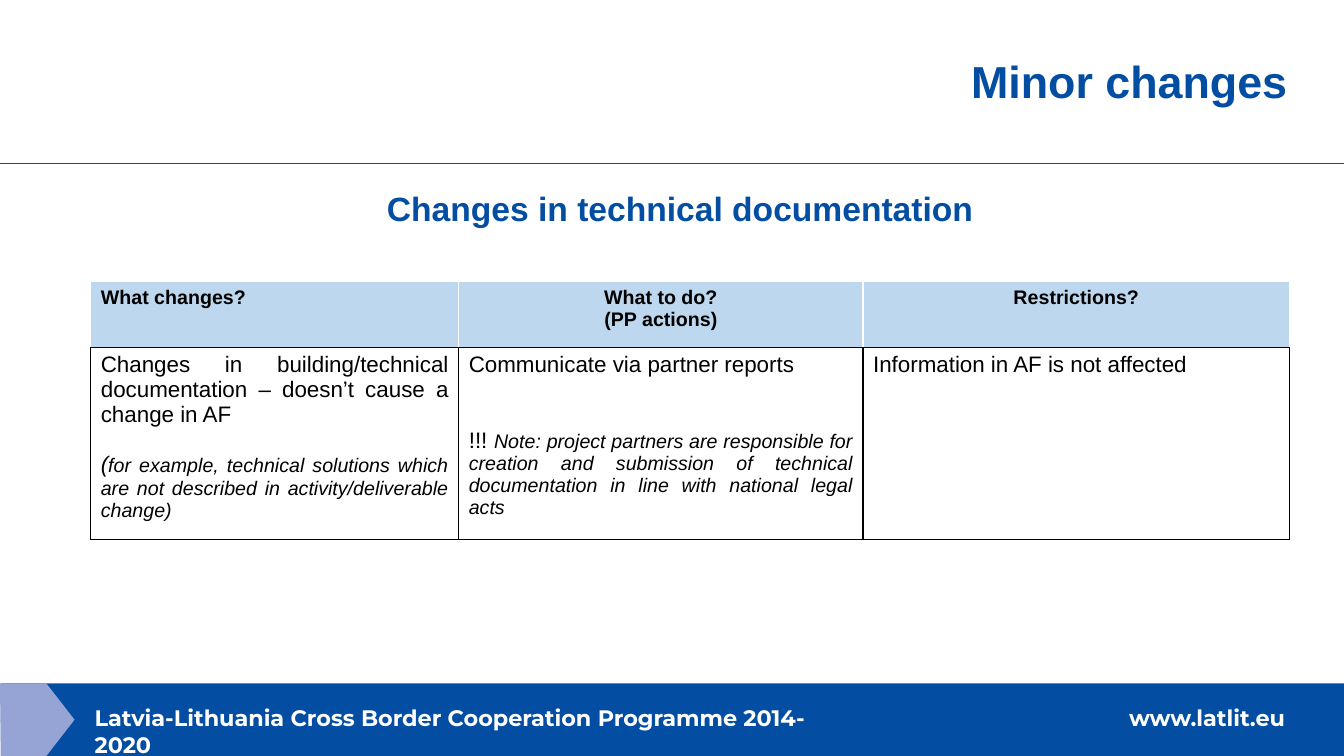
from lxml import etree
from pptx import Presentation
from pptx.dml.color import RGBColor
from pptx.enum.shapes import MSO_CONNECTOR, MSO_SHAPE
from pptx.enum.text import MSO_ANCHOR, PP_ALIGN
from pptx.oxml.ns import qn
from pptx.util import Inches, Pt

BLUE = RGBColor(0x03, 0x4E, 0xA2)
LAVENDER = RGBColor(0x95, 0xA4, 0xD4)
PALE_BLUE = RGBColor(0xBD, 0xD7, 0xEE)
WHITE = RGBColor(0xFF, 0xFF, 0xFF)
BLACK = RGBColor(0, 0, 0)
LEFT, CENTER, RIGHT, JUSTIFY = (
    PP_ALIGN.LEFT, PP_ALIGN.CENTER, PP_ALIGN.RIGHT, PP_ALIGN.JUSTIFY)
TOP = MSO_ANCHOR.TOP
STRAIGHT = MSO_CONNECTOR.STRAIGHT
RECTANGLE = MSO_SHAPE.RECTANGLE

HEADERS = [
    (["What changes?"], LEFT),
    (["What to do?", "(PP actions)"], CENTER),
    (["Restrictions?"], CENTER),
]
DETAILS = [
    [
        (0, [("Changes in building/technical documentation – doesn’t cause a change in AF", 16, False)]),
        (18, [("(", 16, True),
              ("for example, technical solutions which are not described in "
               "activity/deliverable change)", 14, True)]),
    ],
    [
        (0, [("Communicate via partner reports", 16, False)]),
        (36, [("!!! ", 16, False),
              ("Note: project partners are responsible for creation and submission of "
               "technical documentation in line with national legal acts", 14, True)]),
    ],
    [(0, [("Information in AF is not affected", 16, False)])],
]


def write(paragraph, text, size=16, color=BLACK, bold=False, italic=False,
          font="Arial", align=LEFT):
    paragraph.alignment = align
    run = paragraph.add_run()
    run.text = text
    run.font.name = font
    run.font.size = Pt(size)
    run.font.bold = bold
    run.font.italic = italic
    run.font.color.rgb = color


class SlideBuilder:
    def __init__(self, slide):
        self.slide = slide
        self.shapes = slide.shapes

    def paint(self, shape, color):
        shape.shadow.inherit = False
        shape.fill.solid()
        shape.fill.fore_color.rgb = color
        shape.line.fill.background()

    def line(self, x1, y1, x2, y2, color, width):
        rule = self.shapes.add_connector(
            STRAIGHT, Inches(x1), Inches(y1), Inches(x2), Inches(y2))
        rule.line.color.rgb = color
        rule.line.width = Pt(width)
        etree.SubElement(rule.line._get_or_add_ln().getparent(), qn("a:effectLst"))

    def rectangle(self, x, y, width, height, color):
        band = self.shapes.add_shape(
            RECTANGLE, Inches(x), Inches(y), Inches(width), Inches(height))
        self.paint(band, color)

    def polygon(self, points, color):
        corners = [(Inches(x), Inches(y)) for x, y in points]
        outline = self.shapes.build_freeform(*corners[0])
        outline.add_line_segments(corners[1:], close=True)
        self.paint(outline.convert_to_shape(), color)

    def text(self, x, y, width, height, content, **style):
        box = self.shapes.add_textbox(Inches(x), Inches(y), Inches(width), Inches(height))
        frame = box.text_frame
        frame.word_wrap = True
        frame.vertical_anchor = TOP
        write(frame.paragraphs[0], content, **style)

    def borders(self, cell, **sides):
        properties = cell._tc.get_or_add_tcPr()
        for position, (side, color) in enumerate(sides.items()):
            edge = etree.Element(qn(f"a:ln{side}"), w=str(Pt(1)))
            fill = etree.SubElement(edge, qn("a:solidFill"))
            etree.SubElement(fill, qn("a:srgbClr"), val=str(color))
            properties.insert(position, edge)

    def fill_cell(self, cell, color, paragraphs, align, **style):
        cell.fill.solid()
        cell.fill.fore_color.rgb = color
        frame = cell.text_frame
        for index, (space, runs) in enumerate(paragraphs):
            paragraph = frame.add_paragraph() if index else frame.paragraphs[0]
            if space:
                paragraph.space_before = Pt(space)
            for text, size, italic in runs:
                write(paragraph, text, size=size, italic=italic, align=align, **style)

    def table(self, x, y, widths, heights):
        grid = self.shapes.add_table(
            len(heights), len(widths), Inches(x), Inches(y),
            Inches(sum(widths)), Inches(sum(heights))).table
        for column, width in zip(grid.columns, widths):
            column.width = Inches(width)
        for row, height in zip(grid.rows, heights):
            row.height = Inches(height)
        for index, ((lines, align), details) in enumerate(zip(HEADERS, DETAILS)):
            header, detail = grid.cell(0, index), grid.cell(1, index)
            heading = [(0, [(line, 14, False)]) for line in lines]
            self.fill_cell(header, PALE_BLUE, heading, align, bold=True)
            self.borders(header, L=WHITE, R=WHITE, T=WHITE, B=BLACK)
            self.fill_cell(detail, WHITE, details, JUSTIFY)
            self.borders(detail, L=BLACK, R=BLACK, T=BLACK, B=BLACK)


def main():
    deck = Presentation()
    deck.slide_width = Inches(13.33)
    deck.slide_height = Inches(7.5)
    page = SlideBuilder(deck.slides.add_slide(deck.slide_layouts[6]))

    page.line(0, 1.62, 13.33, 1.62, BLUE, 0.5)
    page.rectangle(0.01, 6.78, 13.32, 0.72, BLUE)
    page.polygon([(0, 6.78), (0.46, 6.78), (0.74, 7.14), (0.46, 7.5), (0.01, 7.5)], LAVENDER)
    footer = dict(size=16, color=WHITE, bold=True, font="Montserrat")
    page.text(0.84, 6.94, 7.73, 0.37,
              "Latvia-Lithuania Cross Border Cooperation Programme 2014-2020", **footer)
    page.text(11.1, 6.94, 1.76, 0.37, "www.latlit.eu", **footer)

    heading = dict(color=BLUE, bold=True)
    page.text(4.21, 0.48, 8.66, 1.11, "Minor changes", size=32, align=RIGHT, **heading)
    page.text(0.7, 1.82, 12.09, 0.5, "Changes in technical documentation",
              size=24, align=CENTER, **heading)
    page.table(0.9, 2.79, [3.65, 4.01, 4.23], [0.66, 1.9])
    deck.save("out.pptx")


if __name__ == "__main__":
    main()
